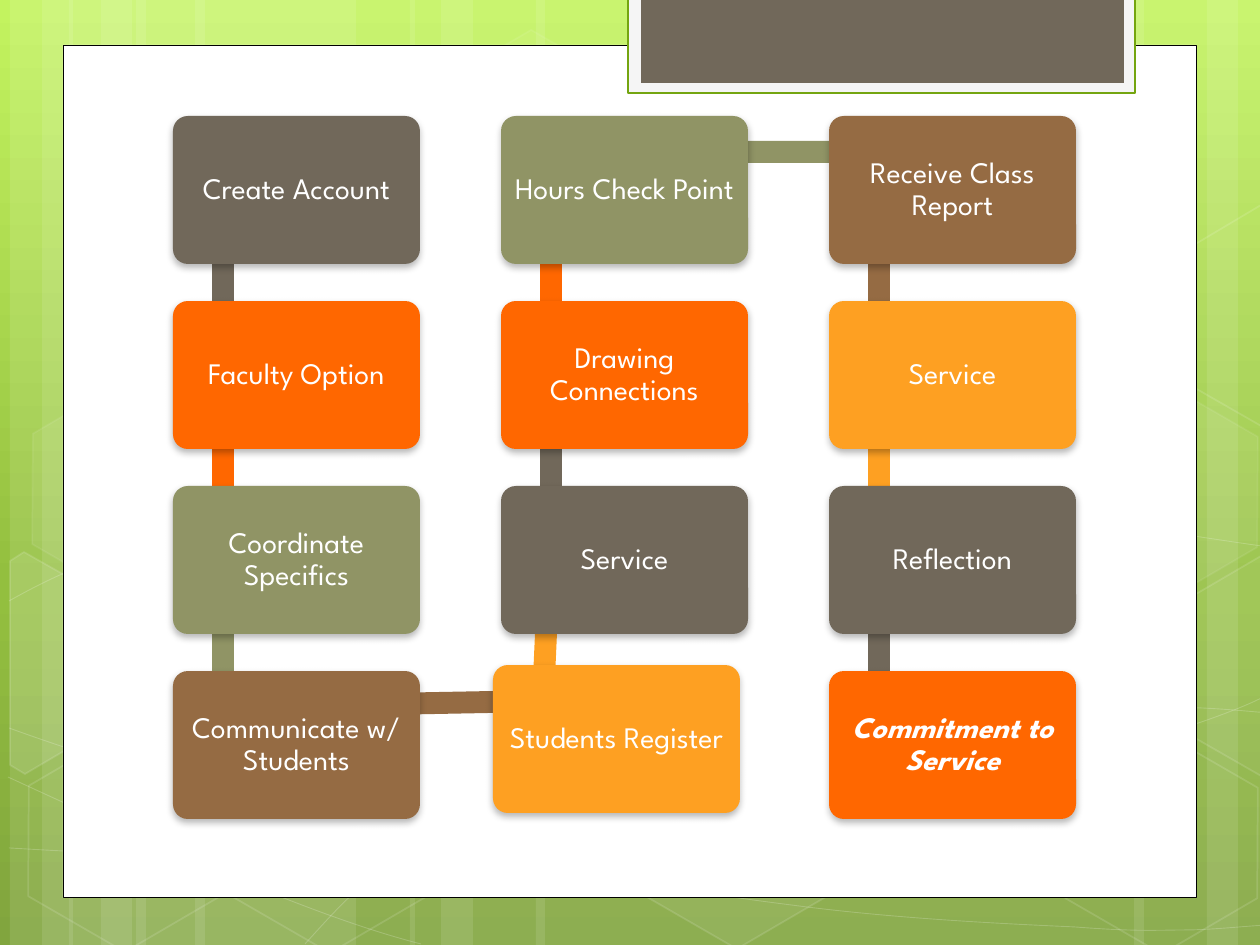
from math import atan2, degrees, hypot

from lxml.etree import SubElement
from pptx import Presentation
from pptx.dml.color import RGBColor
from pptx.enum.shapes import MSO_SHAPE as Shape
from pptx.enum.text import MSO_ANCHOR as Anchor, PP_ALIGN as Align
from pptx.oxml.ns import qn
from pptx.util import Pt

SCALE = 914400 / 126  # EMU per px
WIDTH, HEIGHT = 1260, 945
FONT = "League Spartan"
WHITE, BROWN, GREY, GREEN, ORANGE, AMBER = "FFFFFF", "956B43", "71685A", "909465", "FF6700", "FEA022"

# Steps in reading order: text, colour, column, row
STEPS = [
    ("Create Account", GREY, 0, 0), ("Faculty Option", ORANGE, 0, 1),
    ("Coordinate Specifics", GREEN, 0, 2), ("Communicate w/ Students", BROWN, 0, 3),
    ("Students Register", AMBER, 1, 3), ("Service", GREY, 1, 2),
    ("Drawing Connections", ORANGE, 1, 1), ("Hours Check Point", GREEN, 1, 0),
    ("Receive Class Report", BROWN, 2, 0), ("Service", AMBER, 2, 1),
    ("Reflection", GREY, 2, 2), ("Commitment to Service", ORANGE, 2, 3),
]
NUDGES = {"Students Register": (-8, -6)}
EMPHASIZED = {"Commitment to Service"}
GRID_LEFT, GRID_TOP, COLUMN_STEP, ROW_STEP = 173, 116, 328, 185
BOX_WIDTH, BOX_HEIGHT = 247, 148
ANCHOR_X, ANCHOR_Y, BAR_THICKNESS = 50, 36, 22

# Backdrop: gradient stops, band (left, width), hexagon (left, top, fill and line opacity)
GRADIENT = [(0, "C3F35F"), (62, "93BF3F"), (100, "81A53E")]
BANDS = [(136, 220), (10, 63), (42, 104), (195, 220), (69, 63), (101, 104),
         (924, 220), (1207, 63), (1134, 104), (536, 388), (410, 63), (441, 104)]
HEXAGONS = [(421, 45, 4, 8), (626, 742, 6, 12), (14, 745, 0, 12), (18, 393, 7, 8),
            (219, 746, 0, 12), (949, 571, 10, 12), (1051, 747, 0, 12), (1051, 396, 7, 8)]
CUT_HEXAGONS = [
    ([(10, 561), (24, 552), (121, 607), (120, 718), (25, 774), (10, 765)], 10),
    ([(1167, 611), (1261, 556), (1271, 562), (1271, 772), (1263, 777), (1167, 722)], 4),
    ([(1167, 261), (1261, 205), (1273, 212), (1271, 422), (1263, 427), (1167, 372)], 0),
]
# Cubic curves: a start point, then three points for each segment
CURVES = [
    [(9, 848), (77, 852), (145, 856), (239, 854), (333, 853), (451, 851), (577, 838),
     (703, 825), (882, 801), (998, 777), (1113, 753), (1231, 716), (1269, 694)],
    [(9, 601), (45, 581), (82, 562), (152, 543), (224, 522), (326, 496), (437, 488),
     (549, 479), (685, 478), (824, 488), (963, 498), (1193, 537), (1269, 547)],
    [(8, 777), (160, 847), (311, 916), (421, 944)],
    [(9, 728), (48, 742), (88, 756), (161, 776), (234, 795), (344, 827), (450, 848),
     (554, 869), (687, 892), (791, 905), (896, 919), (1008, 924), (1075, 927),
     (1140, 932), (1158, 930), (1191, 930), (1223, 929), (1246, 926), (1269, 925)],
    [(305, 944), (328, 919), (350, 893), (381, 871), (411, 848), (454, 823), (489, 805),
     (524, 788), (546, 780), (592, 767), (638, 755), (722, 737), (766, 728),
     (811, 719), (818, 719), (857, 717), (896, 713), (958, 709), (1000, 708),
     (1044, 707), (1116, 708), (1116, 708), (1116, 708), (1201, 708), (1201, 708),
     (1223, 709), (1245, 711), (1256, 712), (1268, 713), (1264, 712), (1268, 713)],
]


def px(value):
    return round(value * SCALE)


def paint(fill, color, opacity=100):
    fill.solid()
    fill.fore_color.rgb = RGBColor.from_string(color)
    if opacity < 100:
        tint = fill._xPr.find(qn("a:solidFill"))[0]
        SubElement(tint, qn("a:alpha"), val=str(opacity * 1000))


def style(shape, fill=None, opacity=100, line=None, weight=1, line_opacity=100):
    shape.shadow.inherit = False
    if fill and opacity:
        paint(shape.fill, fill, opacity)
    else:
        shape.fill.background()
    if line:
        shape.line.width = Pt(weight)
        paint(shape.line.fill, line, line_opacity)
    else:
        shape.line.fill.background()
    return shape


def add_box(page, kind, left, top, width, height, **look):
    shape = page.shapes.add_shape(kind, px(left), px(top), px(width), px(height))
    return style(shape, **look)


def add_outline(page, points, close, **look):
    builder = page.shapes.build_freeform(*points[0], scale=SCALE)
    builder.add_line_segments(points[1:], close=close)
    return style(builder.convert_to_shape(), **look)


def add_curve(page, knots, **look):
    shape = add_outline(page, knots, False, **look)
    route = shape._element.find(".//" + qn("a:path"))
    legs = route.findall(qn("a:lnTo"))
    for start in range(0, len(legs), 3):
        bend = SubElement(route, qn("a:cubicBezTo"))
        for leg in legs[start:start + 3]:
            bend.append(leg[0])
            route.remove(leg)
    return shape


def write(shape, text, size=17, color=WHITE, bold=False, italic=False, inset=9):
    frame = shape.text_frame
    frame.word_wrap = True
    frame.vertical_anchor = Anchor.MIDDLE
    frame.margin_left = frame.margin_right = frame.margin_top = frame.margin_bottom = px(inset)
    para = frame.paragraphs[0]
    para.alignment, para.line_spacing = Align.CENTER, 0.9
    span = para.add_run()
    span.text = text
    font = span.font
    font.name, font.size, font.bold, font.italic = FONT, Pt(size), bold, italic
    font.color.rgb = RGBColor.from_string(color)


def add_shadow(shape):
    effects = shape._element.spPr.find(qn("a:effectLst"))
    shadow = SubElement(effects, qn("a:outerShdw"), blurRad=str(Pt(4)), dist=str(Pt(2)),
                        dir="5400000", rotWithShape="0")
    black = SubElement(shadow, qn("a:srgbClr"), val="000000")
    SubElement(black, qn("a:alpha"), val="28000")


def draw_backdrop(page):
    fill = page.background.fill
    fill.gradient()
    fill.gradient_angle = 270
    stops = page._element.find(".//" + qn("a:gsLst"))
    for stop in list(stops):
        stops.remove(stop)
    for position, color in GRADIENT:
        stop = SubElement(stops, qn("a:gs"), pos=str(position * 1000))
        SubElement(stop, qn("a:srgbClr"), val=color)

    for left, width in BANDS:
        add_box(page, Shape.RECTANGLE, left, 0, width, HEIGHT, fill=WHITE, opacity=10)
    for knots in CURVES:
        add_curve(page, knots, line=WHITE, weight=0.5, line_opacity=20)
    for left, top, opacity, line_opacity in HEXAGONS:
        hexagon = add_box(page, Shape.HEXAGON, left, top, 221, 192, fill=WHITE,
                          opacity=opacity, line=WHITE, line_opacity=line_opacity)
        hexagon.adjustments[0] = 0.285
        hexagon.rotation = 30
    for points, opacity in CUT_HEXAGONS:
        add_outline(page, points, True, fill=WHITE, opacity=opacity, line=WHITE, line_opacity=12)

    # White panel and the tab on its upper edge
    add_box(page, Shape.RECTANGLE, 63, 45, 1134, 853, fill=WHITE, line="000000", weight=0.5)
    add_box(page, Shape.RECTANGLE, 628, -2, 507, 95, fill="F5F5F5", line="74A510", weight=1.25)
    add_box(page, Shape.RECTANGLE, 641, -2, 483, 85, fill=GREY)


def draw_steps(page):
    corners = []
    for text, color, column, row in STEPS:
        dx, dy = NUDGES.get(text, (0, 0))
        corners.append((GRID_LEFT + column * COLUMN_STEP + dx, GRID_TOP + row * ROW_STEP + dy))

    # Each bar runs between the same inner point of two neighbouring boxes
    bar_colors = [color for text, color, column, row in STEPS]
    for (x1, y1), (x2, y2), color in zip(corners, corners[1:], bar_colors):
        length = hypot(x2 - x1, y2 - y1)
        left = (x1 + x2 - length) / 2 + ANCHOR_X
        top = (y1 + y2 - BAR_THICKNESS) / 2 + ANCHOR_Y
        bar = add_box(page, Shape.RECTANGLE, left, top, length, BAR_THICKNESS, fill=color)
        bar.rotation = degrees(atan2(y2 - y1, x2 - x1))

    for (text, color, column, row), (left, top) in zip(STEPS, corners):
        box = add_box(page, Shape.ROUNDED_RECTANGLE, left, top, BOX_WIDTH, BOX_HEIGHT, fill=color)
        box.adjustments[0] = 0.1
        add_shadow(box)
        strong = text in EMPHASIZED
        write(box, text, bold=strong, italic=strong)


def main():
    deck = Presentation()
    deck.slide_width, deck.slide_height = px(WIDTH), px(HEIGHT)
    page = deck.slides.add_slide(deck.slide_layouts[6])
    draw_backdrop(page)
    draw_steps(page)
    deck.save("out.pptx")


if __name__ == "__main__":
    main()
